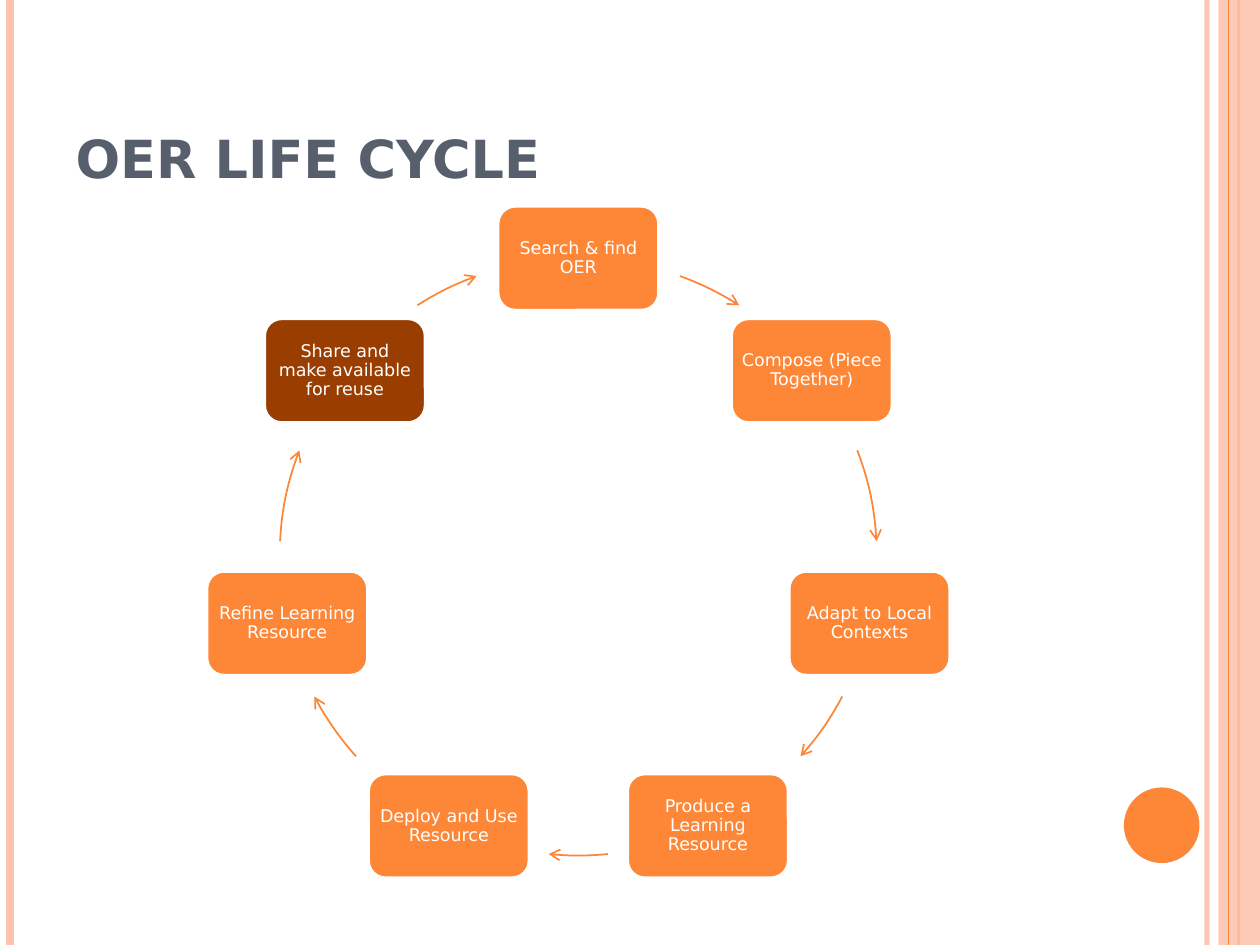
import math

from lxml import etree
from pptx import Presentation
from pptx.dml.color import RGBColor
from pptx.enum import shapes, text
from pptx.oxml import ns
from pptx.util import Inches, Pt

ORANGE = RGBColor(0xFE, 0x86, 0x37)
PEACH = RGBColor(0xFE, 0xC3, 0xAE)
BROWN = RGBColor(0x9A, 0x3D, 0x01)
SLATE = RGBColor(0x57, 0x5F, 0x6D)
WHITE = RGBColor(0xFF, 0xFF, 0xFF)
FONT = "DejaVu Sans"


def write_text(frame, content, size, color, bold=False, align=text.PP_ALIGN.LEFT,
               anchor=text.MSO_ANCHOR.MIDDLE, margin=None, line_spacing=None):
    frame.word_wrap = True
    frame.auto_size = text.MSO_AUTO_SIZE.NONE
    frame.vertical_anchor = anchor
    if margin is not None:
        frame.margin_left = frame.margin_right = margin
        frame.margin_top = frame.margin_bottom = margin
    frame.text = content
    paragraph = frame.paragraphs[0]
    paragraph.alignment = align
    paragraph.line_spacing = line_spacing
    font = paragraph.runs[0].font
    font.name, font.size, font.bold = FONT, Pt(size), bold
    font.color.rgb = color


def set_alpha(properties, percent):
    color = next(properties.iter(ns.qn("a:srgbClr")))
    etree.SubElement(color, ns.qn("a:alpha"), val=str(percent * 1000))


presentation = Presentation()
presentation.slide_width, presentation.slide_height = Inches(10), Inches(7.5)
slide = presentation.slides.add_slide(presentation.slide_layouts[5])

# Band at the right edge and vertical rules: x, colour, width, opacity
band = slide.shapes.add_shape(shapes.MSO_SHAPE.RECTANGLE,
                              Inches(9.67), 0, Inches(0.33), Inches(7.5))
band.shadow.inherit = False
band.fill.solid()
band.fill.fore_color.rgb = PEACH
band.line.fill.background()
set_alpha(band._element.spPr, 87)

for x, color, width, opacity in [(9.58, PEACH, 3, 93), (0.08, PEACH, 4.5, 100),
                                 (9.83, ORANGE, 1.5, 100), (9.75, ORANGE, 0.75, 100)]:
    rule = slide.shapes.add_connector(shapes.MSO_CONNECTOR.STRAIGHT,
                                      Inches(x), 0, Inches(x), Inches(7.5))
    rule.line.color.rgb = color
    rule.line.width = Pt(width)
    if opacity < 100:
        set_alpha(rule._element.spPr, opacity)
    etree.SubElement(rule._element.spPr, ns.qn("a:effectLst"))
    if x == 9.83:  # this rule lies under the translucent band
        band._element.addprevious(rule._element)

# Corner disc
disc = slide.shapes.add_shape(shapes.MSO_SHAPE.OVAL,
                              Inches(8.92), Inches(6.25), Inches(0.6), Inches(0.6))
disc.shadow.inherit = False
disc.fill.solid()
disc.fill.fore_color.rgb = ORANGE
disc.line.fill.background()

# Title
title = slide.shapes.title
title.left, title.top = Inches(0.5), Inches(0.3)
title.width, title.height = Inches(8.17), Inches(1.25)
write_text(title.text_frame, "OER LIFE CYCLE", 30, SLATE, bold=True,
           anchor=text.MSO_ANCHOR.BOTTOM)

# Cycle: each step with the arc to the next one, in degrees clockwise from the top
CENTER_X, CENTER_Y, RADIUS = 4.59, 4.42, 2.37
STEP_WIDTH, STEP_HEIGHT = 1.28, 0.83
steps = [
    ("Search & find OER", ORANGE, 19.9, 32.6),
    ("Compose (Piece Together)", ORANGE, 69.1, 87),
    ("Adapt to Local Contexts", ORANGE, 117.9, 131.9),
    ("Produce a Learning Resource", ORANGE, 174.3, 185.7),
    ("Deploy and Use Resource", ORANGE, 228.1, 242.1),
    ("Refine Learning Resource", ORANGE, 273, 290.9),
    ("Share and make available for reuse", BROWN, 327.4, 340.1),
]
for index, (label, color, arc_start, arc_end) in enumerate(steps):
    angle = 2 * math.pi * index / len(steps)
    x = CENTER_X + RADIUS * math.sin(angle)
    y = CENTER_Y - RADIUS * math.cos(angle)
    step = slide.shapes.add_shape(shapes.MSO_SHAPE.ROUNDED_RECTANGLE,
                                  Inches(x - STEP_WIDTH / 2), Inches(y - STEP_HEIGHT / 2),
                                  Inches(STEP_WIDTH), Inches(STEP_HEIGHT))
    step.shadow.inherit = False
    step.fill.solid()
    step.fill.fore_color.rgb = color
    step.line.color.rgb = WHITE
    step.line.width = Pt(2)
    write_text(step.text_frame, label, 10, WHITE, align=text.PP_ALIGN.CENTER,
               margin=Inches(0.04), line_spacing=0.9)

    arc = slide.shapes.add_shape(shapes.MSO_SHAPE.ARC,
                                 Inches(CENTER_X - RADIUS), Inches(CENTER_Y - RADIUS),
                                 Inches(2 * RADIUS), Inches(2 * RADIUS))
    arc.shadow.inherit = False
    arc.fill.background()
    arc.line.color.rgb = ORANGE
    arc.line.width = Pt(1)
    # Arc angles run from three o'clock, 0.6 adjustment units to the degree
    for side, degrees in enumerate((arc_start, arc_end)):
        arc.adjustments[side] = (degrees - 90) % 360 * 0.6
    etree.SubElement(arc.line._get_or_add_ln(), ns.qn("a:tailEnd"), type="arrow")

presentation.save("out.pptx")
